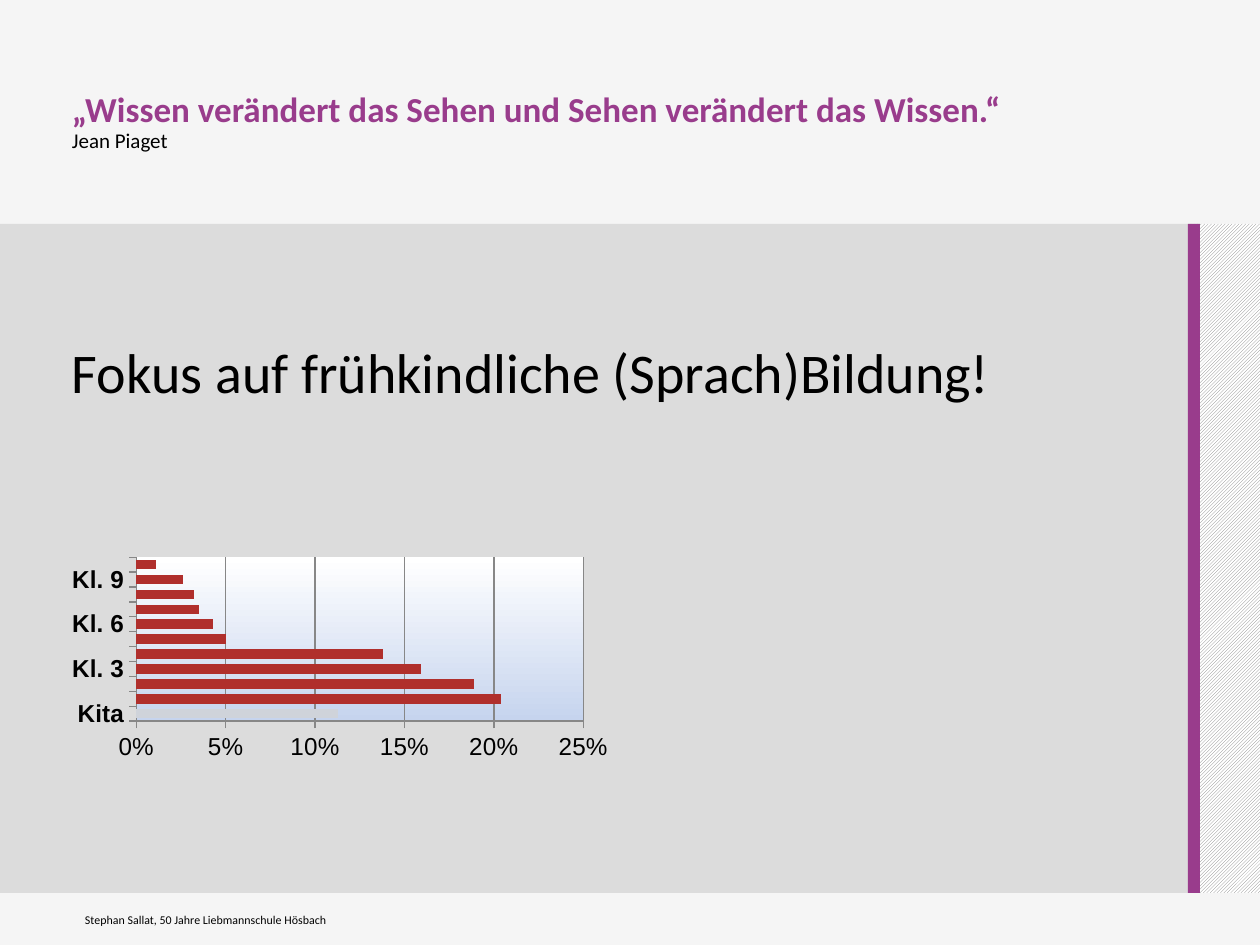
from lxml import etree
from pptx import Presentation
from pptx.chart.data import CategoryChartData
from pptx.dml.color import RGBColor
from pptx.enum.chart import XL_CHART_TYPE, XL_TICK_MARK
from pptx.enum.dml import MSO_PATTERN
from pptx.enum.shapes import MSO_SHAPE
from pptx.enum.text import MSO_ANCHOR
from pptx.oxml import parse_xml
from pptx.util import Emu, Pt

PX = 914400 / 126
RECT = MSO_SHAPE.RECTANGLE
BAR = XL_CHART_TYPE.BAR_CLUSTERED
TICK_OUT = XL_TICK_MARK.OUTSIDE
TICK_NONE = XL_TICK_MARK.NONE
HATCH = MSO_PATTERN.LIGHT_UPWARD_DIAGONAL
TOP, MIDDLE, BOTTOM = MSO_ANCHOR.TOP, MSO_ANCHOR.MIDDLE, MSO_ANCHOR.BOTTOM

PAPER = RGBColor(0xF5, 0xF5, 0xF5)
PANEL = RGBColor(0xDC, 0xDC, 0xDC)
PURPLE = RGBColor(0x99, 0x3C, 0x8C)
GREY = RGBColor(0x80, 0x80, 0x80)
AXIS = RGBColor(0x87, 0x87, 0x87)
RED = RGBColor(0xB0, 0x2F, 0x2C)
PALE = RGBColor(0xCF, 0xD3, 0xDA)
BLACK = RGBColor(0, 0, 0)
WHITE = RGBColor(0xFF, 0xFF, 0xFF)

NS = ('xmlns:c="http://schemas.openxmlformats.org/drawingml/2006/chart" '
      'xmlns:a="http://schemas.openxmlformats.org/drawingml/2006/main"')
PLOT_FILL = f"""<c:spPr {NS}><a:gradFill><a:gsLst>
<a:gs pos="0"><a:srgbClr val="C6D4EE"/></a:gs>
<a:gs pos="100000"><a:srgbClr val="FFFFFF"/></a:gs>
</a:gsLst><a:lin ang="16200000" scaled="0"/></a:gradFill></c:spPr>"""


def px(n):
    return Emu(round(n * PX))


class SlideBuilder:
    def __init__(self, slide, font):
        self.slide = slide
        self.font = font
        slide.background.fill.solid()
        slide.background.fill.fore_color.rgb = PAPER

    def style(self, font, size, color=BLACK, bold=False, name=None):
        font.name = name or self.font
        font.size = Pt(size)
        font.bold = bold
        font.color.rgb = color

    def rect(self, box, color, pattern=None):
        sp = self.slide.shapes.add_shape(RECT, *map(px, box))
        sp.shadow.inherit = False
        sp.line.fill.background()
        if pattern:
            sp.fill.patterned()
            sp.fill.pattern = pattern
            sp.fill.back_color.rgb = WHITE
        else:
            sp.fill.solid()
        sp.fill.fore_color.rgb = color

    def text(self, box, text, styles, anchor, insets, spacing=None):
        """Each style (size, color, bold) goes to one line of the paragraph."""
        tf = self.slide.shapes.add_textbox(*map(px, box)).text_frame
        tf.word_wrap = True
        tf.vertical_anchor = anchor
        (tf.margin_left, tf.margin_top,
         tf.margin_right, tf.margin_bottom) = map(px, insets)
        p = tf.paragraphs[0]
        p.text = text
        p.line_spacing = spacing
        for r, style in zip(p.runs, styles):
            self.style(r.font, *style)

    def axis(self, axis, bold=False):
        axis.major_tick_mark = TICK_OUT
        axis.minor_tick_mark = TICK_NONE
        self.style(axis.tick_labels.font, 14, bold=bold, name="Arial")
        self.line(axis.format.line)

    def line(self, line):
        line.color.rgb = AXIS
        line.width = Pt(0.75)

    def bar_chart(self, box, cats, vals, layout):
        data = CategoryChartData(number_format="0%")
        data.categories = cats
        data.add_series("Series 1", vals)
        chart = self.slide.shapes.add_chart(BAR, *map(px, box), data).chart
        chart.has_title = False
        chart.has_legend = False
        self.style(chart.font, 10)

        # Axes and grid
        self.axis(chart.category_axis, bold=True)
        val = chart.value_axis
        self.axis(val)
        val.minimum_scale, val.maximum_scale, val.major_unit = 0, 0.25, 0.05
        val.tick_labels.number_format = "0%"
        val.tick_labels.number_format_is_linked = False
        val.has_major_gridlines = True
        self.line(val.major_gridlines.format.line)

        # Bars, with the first one paler
        plot = chart.plots[0]
        plot.gap_width, plot.overlap = 54, 13
        plot.vary_by_categories = False
        series = plot.series[0]
        for item, color in ((series, RED), (series.points[0], PALE)):
            item.format.fill.solid()
            item.format.fill.fore_color.rgb = color

        # Plot area: fixed inner layout and gradient fill
        area = chart.element.find(".//{*}plotArea")
        for old in area.findall("{*}layout"):
            area.remove(old)
        node = parse_xml(f'<c:layout {NS}><c:manualLayout/></c:layout>')
        settings = [("layoutTarget", "inner"), ("xMode", "edge"),
                    ("yMode", "edge"), *zip("xywh", layout)]
        ns = etree.QName(node).namespace
        for tag, value in settings:
            etree.SubElement(node[0], f"{{{ns}}}{tag}", val=str(value))
        area.insert(0, node)
        area.append(parse_xml(PLOT_FILL))


def main():
    prs = Presentation()
    prs.slide_width, prs.slide_height = px(1260), px(945)
    s = SlideBuilder(prs.slides.add_slide(prs.slide_layouts[6]), "Calibri")

    # Background panels
    s.rect((1188, 224, 72, 669), GREY, HATCH)
    s.rect((0, 224, 1200, 669), PANEL)
    s.rect((1188, 224, 12, 669), PURPLE)

    # Quotation, main statement and footer
    s.text((72, 50, 1104, 149),
           "„Wissen verändert das Sehen und Sehen verändert das Wissen.“\vJean Piaget",
           [(20, PURPLE, True), (12,)], BOTTOM, (0, 6, 0, 46), 0.9)
    s.text((72, 224, 1061, 669), "Fokus auf frühkindliche (Sprach)Bildung!",
           [(32,)], TOP, (0, 175, 49, 15))
    s.text((72, 895, 558, 50), "Stephan Sallat, 50 Jahre Liebmannschule Hösbach",
           [(6.8,)], MIDDLE, (13, 6, 13, 6))

    # Shares by school level
    cats = ["Kita"] + [f"Kl. {n}" for n in range(1, 11)]
    vals = [0.113, 0.204, 0.189, 0.159, 0.138, 0.05,
            0.043, 0.035, 0.032, 0.026, 0.011]
    s.bar_chart((72, 542, 538, 219), cats, vals, (0.11, 0.07, 0.84, 0.75))

    prs.save("out.pptx")


if __name__ == "__main__":
    main()
